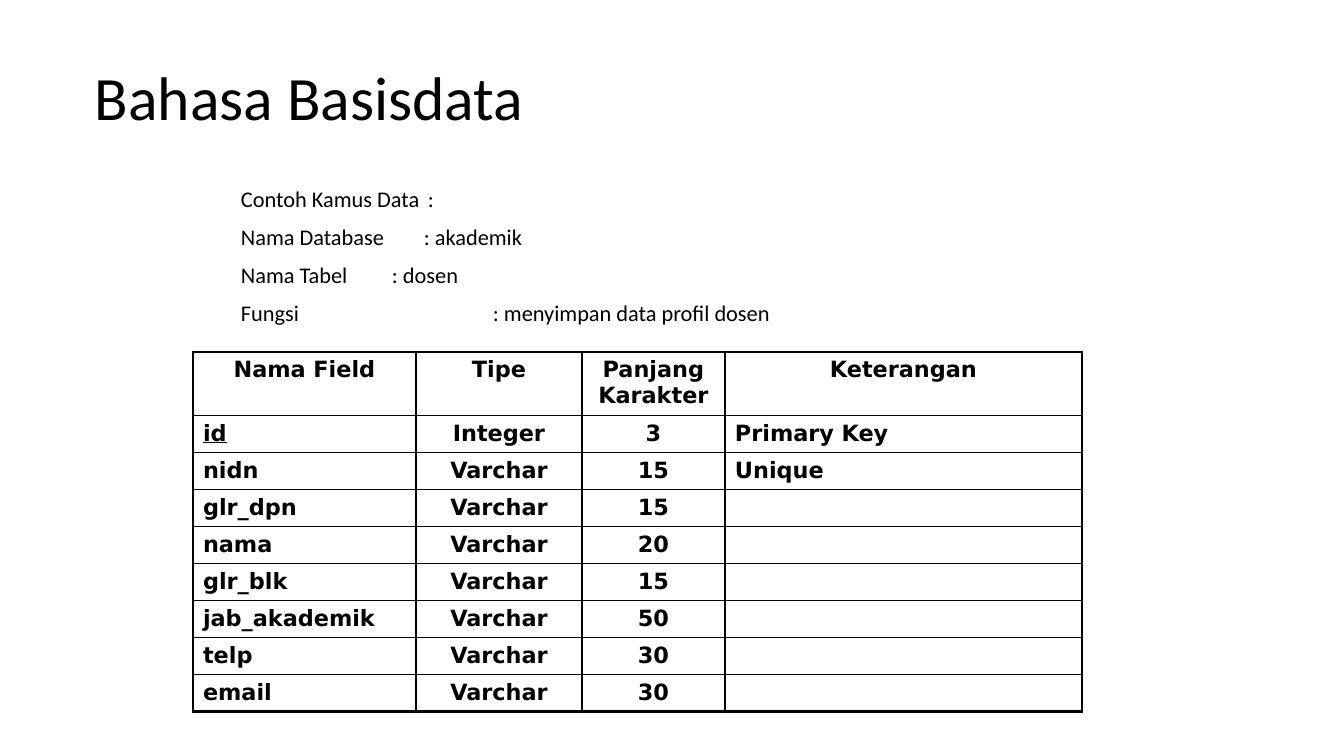
from lxml import etree
from pptx import Presentation
from pptx import util as u
from pptx.dml.color import RGBColor
from pptx.enum import text
from pptx.oxml.ns import qn

EMU_PER_PX = 914400 / 100.8
BLACK = "000000"

INTRO = [  # label, value, tab stop in px
    ("Contoh Kamus Data", ":", 187),
    ("Nama Database", ": akademik", 183),
    ("Nama Tabel", ": dosen", 151),
    ("Fungsi", ": menyimpan data profil dosen", 252),
]
HEADER = ("Nama Field", "Tipe", "Panjang Karakter", "Keterangan")
FIELDS = [
    ("id", "Integer", "3", "Primary Key"),
    ("nidn", "Varchar", "15", "Unique"),
    ("glr_dpn", "Varchar", "15", ""),
    ("nama", "Varchar", "20", ""),
    ("glr_blk", "Varchar", "15", ""),
    ("jab_akademik", "Varchar", "50", ""),
    ("telp", "Varchar", "30", ""),
    ("email", "Varchar", "30", ""),
]
COL_WIDTHS = (223, 166, 143, 357)
ROW_HEIGHTS = (62, 36, 36, 36, 37, 37, 37, 37, 36)


def px(n):
    return u.Emu(round(n * EMU_PER_PX))


def color(hex_value):
    return RGBColor.from_string(hex_value)


def set_font(p, size, name, bold=False):
    p.font.size = u.Pt(size)
    p.font.name = name
    p.font.bold = bold
    p.font.color.rgb = color(BLACK)


def add_text_frame(s, box):
    tf = s.shapes.add_textbox(*map(px, box)).text_frame
    tf.word_wrap = True
    return tf


def add_title(s, box):
    tf = add_text_frame(s, box)
    tf.vertical_anchor = text.MSO_ANCHOR.MIDDLE
    p = tf.paragraphs[0]
    p.text = "Bahasa Basisdata"
    p.line_spacing = 0.9
    set_font(p, 44, "Calibri")


def add_tab_stop(p, pos):
    tabs = etree.SubElement(p._p.get_or_add_pPr(), qn("a:tabLst"))
    etree.SubElement(tabs, qn("a:tab"), pos=str(px(pos)), algn="l")


def add_intro(s, box):
    tf = add_text_frame(s, box)
    for i, (label, value, stop) in enumerate(INTRO):
        p = tf.add_paragraph() if i else tf.paragraphs[0]
        p.text = f"{label}\t{value}"
        add_tab_stop(p, stop)
        p.line_spacing = 0.9
        p.space_before = u.Pt(10 if i else 0)
        set_font(p, 16, "Calibri")


def set_borders(cell, outer_edges):
    """Draw all four borders, with a heavier line on the table's outer edges."""
    tc_pr = cell._tc.get_or_add_tcPr()
    for i, side in enumerate("LRTB"):
        width = u.Pt(2.25 if side in outer_edges else 1)
        ln = etree.Element(qn(f"a:ln{side}"), w=str(width))
        fill = etree.SubElement(ln, qn("a:solidFill"))
        etree.SubElement(fill, qn("a:srgbClr"), val=BLACK)
        tc_pr.insert(i, ln)


def add_field_table(s, left, top):
    rows = [HEADER, *FIELDS]
    last_row, last_col = len(rows) - 1, len(HEADER) - 1
    box = (left, top, sum(COL_WIDTHS), sum(ROW_HEIGHTS))
    table = s.shapes.add_table(len(rows), len(HEADER), *map(px, box)).table
    table.first_row = table.horz_banding = False
    for col, width in zip(table.columns, COL_WIDTHS):
        col.width = px(width)
    for row, height in zip(table.rows, ROW_HEIGHTS):
        row.height = px(height)
    for r, values in enumerate(rows):
        for c, value in enumerate(values):
            cell = table.cell(r, c)
            cell.fill.background()
            edges = {"T": r == 0, "B": r == last_row,
                     "L": c == 0, "R": c == last_col}
            set_borders(cell, [side for side, outer in edges.items() if outer])
            p = cell.text_frame.paragraphs[0]
            p.text = value
            centred = r == 0 or 0 < c < last_col
            p.alignment = text.PP_ALIGN.CENTER if centred else text.PP_ALIGN.LEFT
            set_font(p, 16, "DejaVu Sans", bold=True)
            if value == "id":
                p.font.underline = True


def main():
    prs = Presentation()
    prs.slide_width, prs.slide_height = px(1344), px(756)
    s = prs.slides.add_slide(prs.slide_layouts[6])
    add_title(s, (85, 33, 1176, 134))
    add_intro(s, (231, 183, 925, 169))
    add_field_table(s, 193, 352)
    prs.save("out.pptx")


if __name__ == "__main__":
    main()
